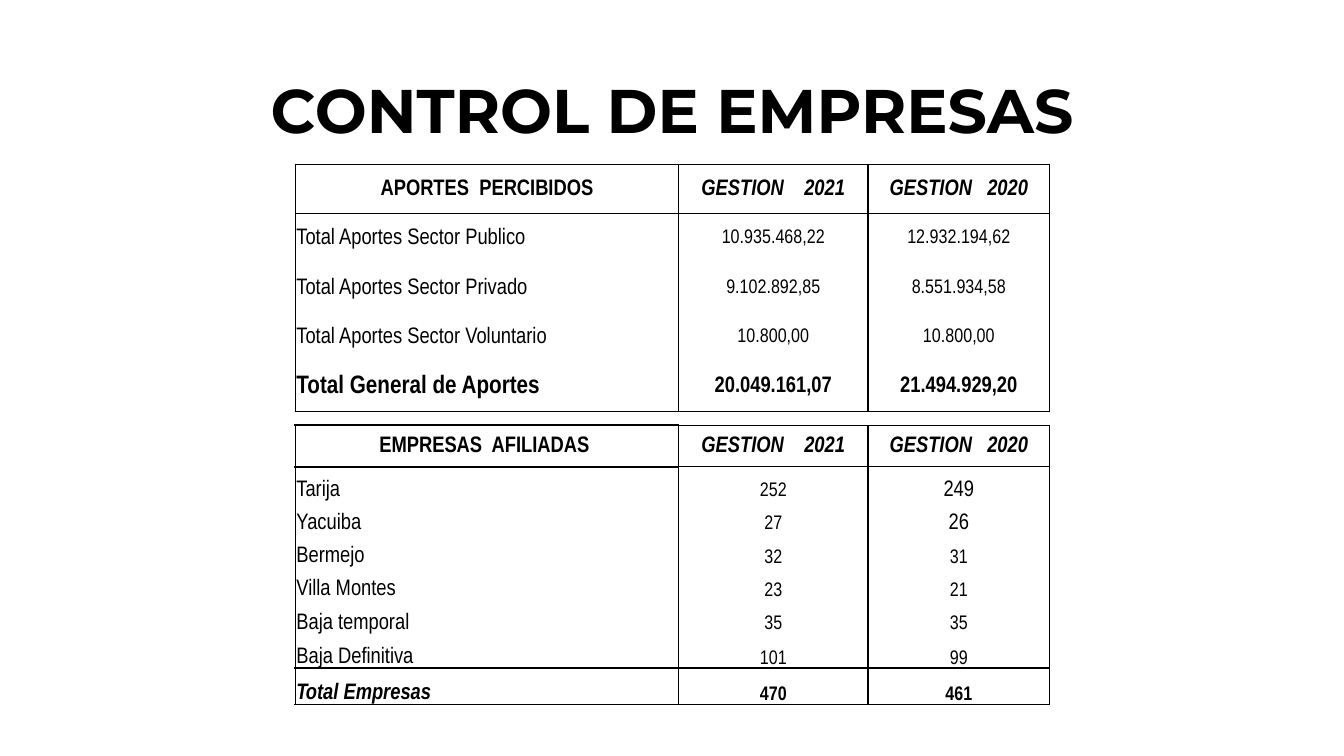
from lxml import etree
from pptx import Presentation
from pptx.dml.color import RGBColor
from pptx.enum.text import MSO_ANCHOR, PP_ALIGN
from pptx.oxml.ns import qn
from pptx.util import Inches, Pt

LEFT, CENTER = PP_ALIGN.LEFT, PP_ALIGN.CENTER
MIDDLE, BOTTOM = MSO_ANCHOR.MIDDLE, MSO_ANCHOR.BOTTOM
COLORS = {"ink": "000000"}
COLUMN_WIDTHS = [3.8, 1.88, 1.8]


def write(frame, text, font, size, align, bold=False, italic=False):
    paragraph = frame.paragraphs[0]
    paragraph.alignment = align
    run = paragraph.add_run()
    run.text = text
    run.font.name = font
    run.font.size = Pt(size)
    run.font.bold = bold
    run.font.italic = italic
    run.font.color.rgb = RGBColor.from_string(COLORS["ink"])
    return paragraph


def set_borders(cell, widths):
    properties = cell._tc.get_or_add_tcPr()
    for position, side in enumerate("LRTB"):
        width = widths.get(side, 0)
        line = etree.Element(qn(f"a:ln{side}"), w=str(Pt(width)))
        if width:
            fill = etree.SubElement(line, qn("a:solidFill"))
            etree.SubElement(fill, qn("a:srgbClr"), val=COLORS["ink"])
        else:
            etree.SubElement(line, qn("a:noFill"))
        properties.insert(position, line)


prs = Presentation()
prs.slide_width = Inches(13.33)
prs.slide_height = Inches(7.5)
slide = prs.slides.add_slide(prs.slide_layouts[5])

title = slide.shapes.title
title.left, title.top = Inches(0.92), Inches(0.4)
title.width, title.height = Inches(11.5), Inches(1.45)
title.text_frame.vertical_anchor = MIDDLE
heading = write(title.text_frame, "CONTROL DE EMPRESAS", "Montserrat", 44, CENTER, bold=True)
heading.line_spacing = 0.9

contributions = [
    ("APORTES  PERCIBIDOS", "GESTION    2021", "GESTION   2020"),
    ("Total Aportes Sector Publico", "10.935.468,22", "12.932.194,62"),
    ("Total Aportes Sector Privado", "9.102.892,85", "8.551.934,58"),
    ("Total Aportes Sector Voluntario", "10.800,00", "10.800,00"),
    ("Total General de Aportes", "20.049.161,07", "21.494.929,20"),
]
companies = [
    ("EMPRESAS  AFILIADAS ", "GESTION    2021", "GESTION   2020"),
    ("Tarija", "252", "249"),
    ("Yacuiba", "27", "26"),
    ("Bermejo", "32", "31"),
    ("Villa Montes", "23", "21"),
    ("Baja temporal", "35", "35"),
    ("Baja Definitiva", "101", "99"),
    ("Total Empresas", "470", "461"),
]
sections = [
    {"top": 1.63, "rows": contributions, "heights": [0.49] * 5, "anchor": MIDDLE,
     "line": 1, "total_rule": False, "total_italic": False,
     "sizes": {(4, 0): 18, (4, 1): 16, (4, 2): 16}},
    {"top": 4.22, "rows": companies, "anchor": BOTTOM,
     "heights": [0.41, 0.34, 0.33, 0.33, 0.33, 0.33, 0.34, 0.36],
     "line": 1.5, "total_rule": True, "total_italic": True,
     "sizes": {(1, 2): 16, (2, 2): 16}},
]

for section in sections:
    rows, heights, line = section["rows"], section["heights"], section["line"]
    total = len(rows) - 1
    table = slide.shapes.add_table(
        len(rows), 3, Inches(2.93), Inches(section["top"]),
        Inches(sum(COLUMN_WIDTHS)), Inches(sum(heights))).table
    table.first_row = False
    table.horz_banding = False
    for column, width in zip(table.columns, COLUMN_WIDTHS):
        column.width = Inches(width)

    for r, (values, height) in enumerate(zip(rows, heights)):
        table.rows[r].height = Inches(height)
        for c, value in enumerate(values):
            cell = table.cell(r, c)
            cell.fill.background()
            cell.margin_left = cell.margin_right = cell.margin_top = Inches(0.01)
            cell.margin_bottom = 0
            cell.vertical_anchor = MIDDLE if r == 0 else section["anchor"]
            default_size = 16 if r == 0 or c == 0 else 14
            write(cell.text_frame, value, "Arial Narrow",
                  section["sizes"].get((r, c), default_size),
                  LEFT if r > 0 and c == 0 else CENTER,
                  bold=r in (0, total),
                  italic=c > 0 if r == 0 else section["total_italic"] and r == total and c == 0)

            header_line = line if c == 0 else 1
            borders = {"L": line, "R": line}
            if r == 0:
                borders = {"L": header_line, "R": 1, "T": header_line, "B": header_line}
            if r == 1:
                borders["T"] = header_line
            if r == total or section["total_rule"] and r == total - 1:
                borders["B"] = line
            if r == total and section["total_rule"]:
                borders["T"] = line
            set_borders(cell, borders)

prs.save("out.pptx")
